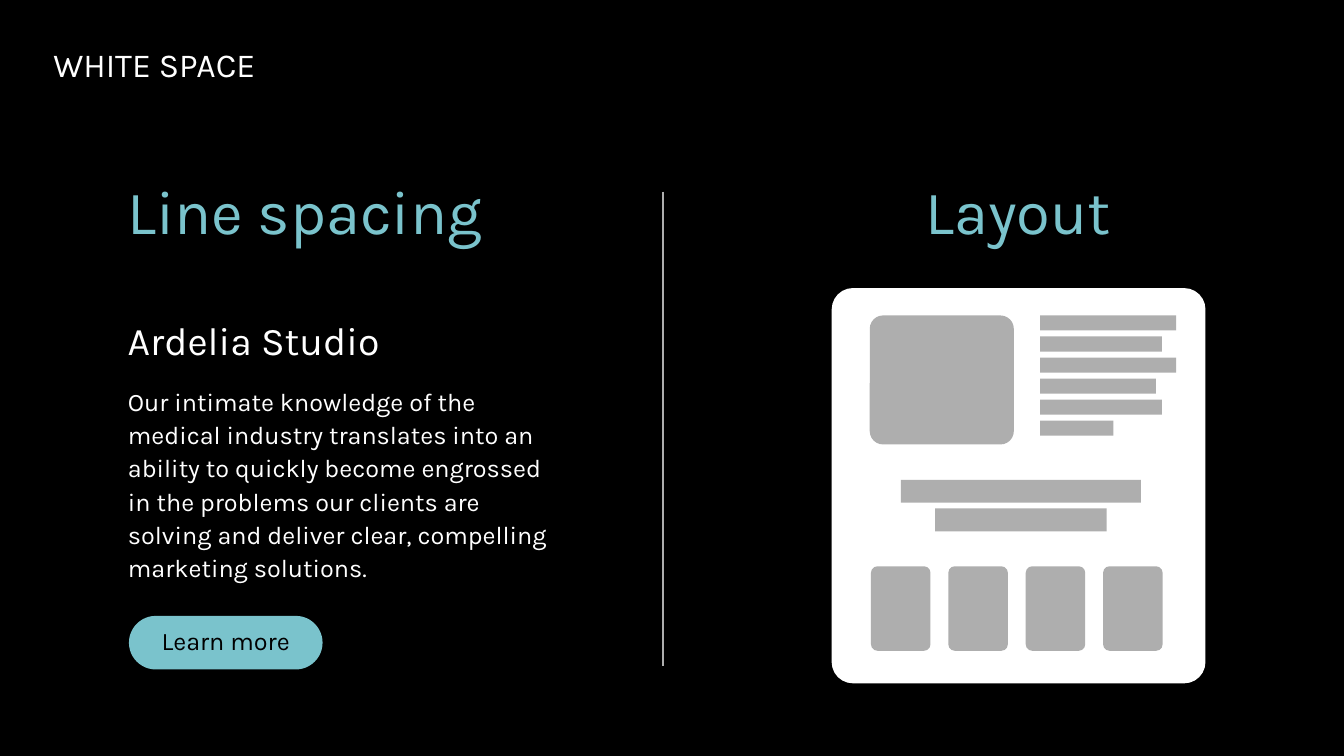
"""Build the white space slide: line spacing on the left, page layout on the right."""
from typing import NamedTuple, Optional

from lxml import etree
from pptx import Presentation
from pptx import util as u
from pptx.dml.color import RGBColor
from pptx.enum import shapes, text
from pptx.oxml.ns import qn

BLACK, WHITE, TEAL, GREY = "000000", "FFFFFF", "7AC3CC", "AEAEAE"
LEFT, MID = text.PP_ALIGN.LEFT, text.PP_ALIGN.CENTER
TOP = text.MSO_ANCHOR.TOP


class Box(NamedTuple):
    x: float
    y: float
    w: float
    h: float


class Block(NamedTuple):
    box: Box
    fill: str = GREY
    round: Optional[float] = None


class Words(NamedTuple):
    line: str
    size: int
    hue: str = WHITE
    align: text.PP_ALIGN = LEFT
    gap: float = 1.0


def paint(target, code: str) -> None:
    target.solid()
    target.fore_color.rgb = RGBColor.from_string(code)


def place(shape, box: Box) -> None:
    shape.left, shape.top, shape.width, shape.height = map(u.Cm, box)


def write(shape, words: Words, anchor: text.MSO_ANCHOR = TOP, wrap: bool = True) -> None:
    frame = shape.text_frame
    frame.auto_size = text.MSO_AUTO_SIZE.NONE
    frame.word_wrap = wrap
    frame.vertical_anchor = anchor
    para = frame.paragraphs[0]
    para.alignment = words.align
    para.line_spacing = words.gap
    para.space_before = u.Pt(0)
    run = para.add_run()
    run.text = words.line
    run.font.name = "Karla"
    run.font.size = u.Pt(words.size)
    paint(run.font.fill, words.hue)


def label(slide, box: Box, words: Words):
    shape = slide.shapes.add_textbox(*map(u.Cm, box))
    write(shape, words)
    return shape


def draw(slide, block: Block):
    kind = shapes.MSO_SHAPE.RECTANGLE
    if block.round is not None:
        kind = shapes.MSO_SHAPE.ROUNDED_RECTANGLE
    shape = slide.shapes.add_shape(kind, *map(u.Cm, block.box))
    if block.round is not None:
        shape.adjustments[0] = block.round
    shape.shadow.inherit = False
    paint(shape.fill, block.fill)
    shape.line.fill.background()
    return shape


def rule(slide, x: float, top: float, end: float) -> None:
    line = slide.shapes.add_connector(
        shapes.MSO_CONNECTOR.STRAIGHT, u.Cm(x), u.Cm(top), u.Cm(x), u.Cm(end))
    paint(line.line.fill, GREY)
    line.line.width = u.Pt(1)
    etree.SubElement(line.element.spPr, qn("a:effectLst"))


def spacing(slide) -> None:
    head = label(slide, Box(2.9, 4.24, 9.83, 2.13), Words("Line spacing", 44, TEAL, MID))
    head.text_frame.margin_left = 0
    label(slide, Box(2.97, 7.98, 11.46, 1.35), Words("Ardelia Studio", 28, gap=0.9))

    body = slide.placeholders[1]
    place(body, Box(2.97, 9.53, 11.46, 5.28))
    props = body.text_frame.paragraphs[0]._p.get_or_add_pPr()
    props.set("marL", "0")
    props.set("indent", "0")
    etree.SubElement(props, qn("a:buNone"))
    write(body, Words(
        "Our intimate knowledge of the medical industry translates into an ability to "
        "quickly become engrossed in the problems our clients are solving and deliver "
        "clear, compelling marketing solutions.", 18, gap=1.1))

    button = draw(slide, Block(Box(3.25, 15.52, 4.88, 1.35), TEAL, 0.5))
    write(button, Words("Learn more", 18, BLACK, MID, 0.9), text.MSO_ANCHOR.MIDDLE)


def layout(slide) -> None:
    label(slide, Box(20.75, 4.24, 9.83, 2.13), Words("Layout", 44, TEAL, MID))
    card = Block(Box(20.96, 7.26, 9.42, 9.96), WHITE, 0.057)
    photo = Block(Box(21.92, 7.95, 3.63, 3.25), round=0.103)
    lines = [Block(Box(26.21, 7.95 + 0.53 * i, wide, 0.38))
             for i, wide in enumerate((3.43, 3.07, 3.43, 2.92, 3.07, 1.85))]
    bars = [Block(Box(25.73 - wide / 2, 12.09 + 0.72 * i, wide, 0.58))
            for i, wide in enumerate((6.05, 4.32))]
    tiles = [Block(Box(21.95 + 1.95 * i, 14.27, 1.5, 2.13), round=0.109) for i in range(4)]
    for block in (card, photo, *lines, *bars, *tiles):
        draw(slide, block)


def main() -> None:
    deck = Presentation()
    deck.slide_width, deck.slide_height = u.Cm(33.87), u.Cm(19.05)
    slide = deck.slides.add_slide(deck.slide_layouts[1])
    paint(slide.background.fill, BLACK)
    title = slide.shapes.title
    place(title, Box(1.09, 0.97, 6.38, 1.27))
    write(title, Words("WHITE SPACE", 24), wrap=False)
    spacing(slide)
    rule(slide, 16.71, 4.83, 16.79)
    layout(slide)
    deck.save("out.pptx")


if __name__ == "__main__":
    main()
